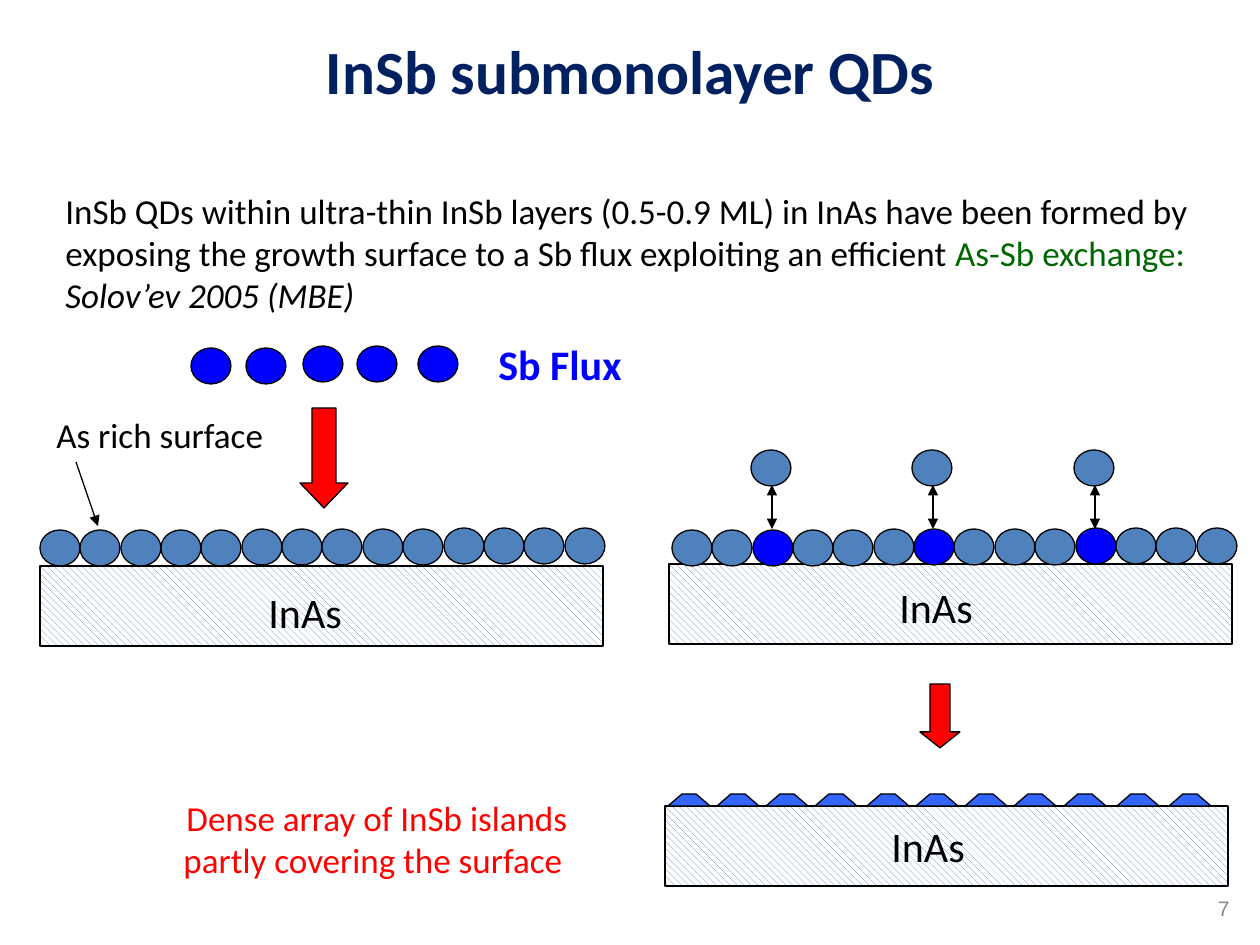
from lxml import etree
from pptx import Presentation
from pptx import util as u
from pptx.dml.color import RGBColor
from pptx.enum import dml, shapes, text
from pptx.oxml.ns import qn

PX = u.Inches(1) // 126
COLORS = {
    "black": "000000", "white": "FFFFFF", "green": "006600", "arsenic": "4F81BD",
    "antimony": "0000FF", "red": "FF0000", "island": "3366FF", "navy": "002060",
    "grey": "898989",
}
ATOM_W, ATOM_H, ATOM_PITCH = 40, 36, 40.35
LAYER_W, LAYER_H = 563, 80
ISLAND_W, ISLAND_H = 42, 12


def rgb(name):
    return RGBColor.from_string(COLORS[name])


def outline(sp):
    sp.line.color.rgb = rgb("black")
    sp.line.width = u.Pt(0.75)


def paint(sp, color):
    sp.shadow.inherit = False
    sp.fill.solid()
    sp.fill.fore_color.rgb = rgb(color)
    outline(sp)


def add_preset(slide, kind, x, y, w, h, color):
    sp = slide.shapes.add_shape(kind, x * PX, y * PX, w * PX, h * PX)
    paint(sp, color)
    return sp


def add_atom(slide, x, y, color):
    add_preset(slide, shapes.MSO_SHAPE.OVAL, x, y, ATOM_W, ATOM_H, color)


def add_atom_row(slide, x, y, exchanged=()):
    """Draw 14 touching atoms; those at the exchanged indexes are Sb."""
    for i in range(14):
        color = "antimony" if i in exchanged else "arsenic"
        add_atom(slide, x + round(i * ATOM_PITCH), y - i // 5, color)


def add_layer(slide, x, y):
    sp = add_preset(slide, shapes.MSO_SHAPE.RECTANGLE, x, y, LAYER_W, LAYER_H, "white")
    sp.fill.patterned()
    sp.fill.pattern = dml.MSO_PATTERN.WIDE_DOWNWARD_DIAGONAL
    sp.fill.fore_color.rgb = rgb("arsenic")
    sp.fill.back_color.rgb = rgb("white")


def add_island(slide, x, y):
    third = ISLAND_W // 3
    fb = slide.shapes.build_freeform(x, y + ISLAND_H, scale=PX)
    fb.add_line_segments([(x + third, y), (x + 2 * third, y),
                          (x + ISLAND_W, y + ISLAND_H)], close=True)
    paint(fb.convert_to_shape(), "island")


def add_block_arrow(slide, x, y, w, h, head):
    sp = add_preset(slide, shapes.MSO_SHAPE.DOWN_ARROW, x, y, w, h, "red")
    sp.adjustments[1] = head


def add_arrow(slide, x1, y1, x2, y2, ends=("tailEnd",)):
    line = slide.shapes.add_connector(
        shapes.MSO_CONNECTOR.STRAIGHT, x1 * PX, y1 * PX, x2 * PX, y2 * PX)
    outline(line)
    ln = line.line._get_or_add_ln()
    for end in ends:
        etree.SubElement(ln, qn(f"a:{end}"), type="triangle")
    etree.SubElement(line._element.spPr, qn("a:effectLst"))


def add_text(slide, x, y, w, h, runs, size, align="LEFT", anchor="TOP", font="Calibri"):
    """Add one paragraph; each run is (words, colour, extra font values)."""
    tf = slide.shapes.add_textbox(x * PX, y * PX, w * PX, h * PX).text_frame
    tf.word_wrap = True
    tf.vertical_anchor = text.MSO_ANCHOR[anchor]
    p = tf.paragraphs[0]
    p.alignment = text.PP_ALIGN[align]
    for words, color, extra in runs:
        r = p.add_run()
        r.text = words
        r.font.color.rgb = rgb(color)
        for name, value in {"name": font, "size": u.Pt(size), **extra}.items():
            setattr(r.font, name, value)


def add_texts(slide):
    add_text(slide, 134, 0, 992, 139, [("InSb submonolayer QDs", "navy", {"bold": True})],
             35.1, "CENTER", "MIDDLE")
    add_text(slide, 53, 183, 1207, 139, [
        ("InSb QDs within ultra-thin InSb layers (0.5-0.9 ML) in InAs have been formed by "
         "exposing the growth surface to a Sb flux exploiting an efficient ", "black", {}),
        ("As-Sb exchange: ", "green", {}),
        ("Solov’ev 2005 (MBE)", "black", {"italic": True})], 20)
    add_text(slide, 486, 332, 217, 63, [("Sb Flux", "antimony", {"bold": True})], 24)
    add_text(slide, 44, 407, 403, 54, [("As rich surface", "black", {})], 20)
    add_text(slide, 132, 790, 490, 97,
             [("Dense array of InSb islands partly covering the surface ", "red", {})],
             20, "CENTER")
    for x, y in ((256, 580), (887, 575), (879, 814)):
        add_text(slide, x, y, 262, 63, [("InAs", "black", {})], 24)
    add_text(slide, 1192, 883, 50, 50, [("7", "grey", {})], 12, "RIGHT", "MIDDLE", "Arial")


def main():
    prs = Presentation()
    prs.slide_width, prs.slide_height = 1260 * PX, 945 * PX
    slide = prs.slides.add_slide(prs.slide_layouts[6])

    # Sb flux onto the As rich surface
    for x, y in ((191, 348), (246, 348), (303, 346), (357, 346), (418, 346)):
        add_atom(slide, x, y, "antimony")
    add_block_arrow(slide, 300, 408, 48, 100, 0.52)
    add_layer(slide, 40, 566)
    add_atom_row(slide, 40, 530)

    # As-Sb exchange
    exchanged = (2, 6, 10)
    add_layer(slide, 669, 564)
    add_atom_row(slide, 672, 530, exchanged)
    for i in exchanged:
        x = 672 + round(i * ATOM_PITCH)
        add_atom(slide, x - 2, 450, "arsenic")
        add_arrow(slide, x + 19, 485, x + 19, 529, ("headEnd", "tailEnd"))

    # InSb islands
    add_block_arrow(slide, 920, 684, 40, 64, 0.4)
    add_layer(slide, 665, 806)
    for x in (668, 717, 766, 815, 867, 916, 965, 1014, 1064, 1117, 1169):
        add_island(slide, x, 794)

    add_texts(slide)
    add_arrow(slide, 76, 462, 98, 526)
    prs.save("out.pptx")


if __name__ == "__main__":
    main()
